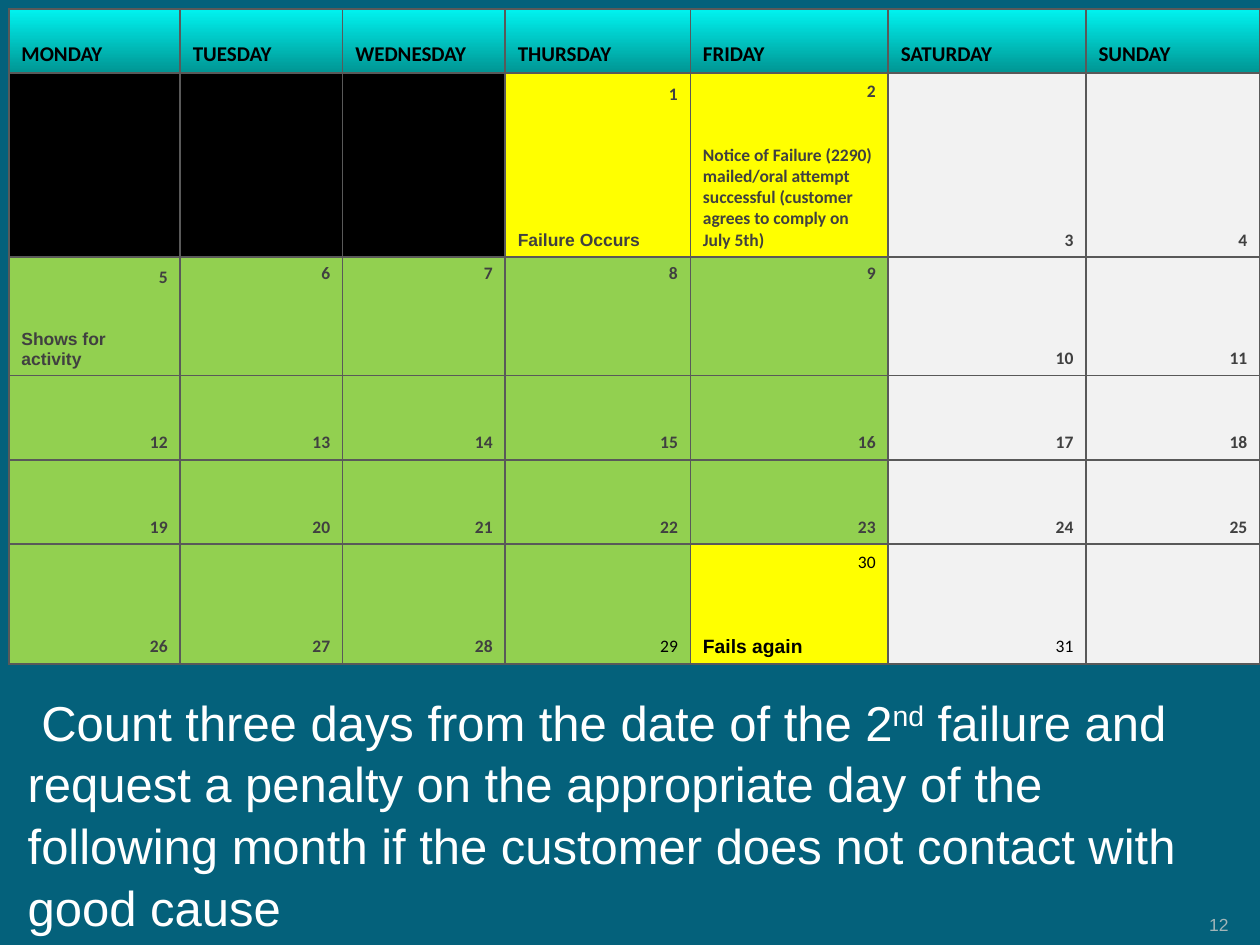
from dataclasses import dataclass

from lxml import etree
from pptx import Presentation
from pptx.dml.color import RGBColor
from pptx.enum.text import MSO_ANCHOR, PP_ALIGN
from pptx.oxml.ns import qn
from pptx.util import Inches, Pt

LEFT, RIGHT = PP_ALIGN.LEFT, PP_ALIGN.RIGHT
TOP, BOTTOM = MSO_ANCHOR.TOP, MSO_ANCHOR.BOTTOM

TEAL = RGBColor(0x04, 0x61, 0x7B)
CYAN = RGBColor(0x00, 0xF3, 0xF0)
DEEP = RGBColor(0x00, 0x95, 0x93)
BLACK = RGBColor(0x00, 0x00, 0x00)
WHITE = RGBColor(0xFF, 0xFF, 0xFF)
YELLOW = RGBColor(0xFF, 0xFF, 0x00)
GREEN = RGBColor(0x92, 0xD0, 0x50)
PALE = RGBColor(0xF2, 0xF2, 0xF2)
DARK = RGBColor(0x40, 0x40, 0x40)
GREY = RGBColor(0x59, 0x59, 0x59)
MIST = RGBColor(0xA2, 0xB5, 0xB8)

NAMES = ["MONDAY", "TUESDAY", "WEDNESDAY", "THURSDAY", "FRIDAY", "SATURDAY", "SUNDAY"]
WIDTHS = [1.36, 1.29, 1.29, 1.47, 1.57, 1.57, 1.38]
HEIGHTS = [0.51, 1.46, 0.94, 0.67, 0.67, 0.95]
BLANKS = 3  # cells before the first of the month
LAST = 31
WEEKEND = 5  # column of Saturday
HIGH = range(6, 10)  # days whose number stands at the top
PLAIN = range(29, LAST + 1)  # days in regular black type


@dataclass
class Note:
    lines: list[str]
    gap: float  # points between the day number and the note
    font: str = "Arial"
    size: float = 10
    color: RGBColor = DARK
    fill: RGBColor = YELLOW


NOTES = {
    1: Note(["Failure Occurs"], 72),
    2: Note(["Notice of Failure (2290) mailed/oral attempt successful "
             "(customer agrees to comply on July 5th)"], 24, font="Calibri"),
    5: Note(["Shows for", "activity"], 24, fill=GREEN),
    30: Note(["Fails again"], 36, size=11, color=BLACK),
}


def write(para, text: str, *, font: str = "Calibri", size: float = 10,
          color: RGBColor = DARK, bold: bool = False, align=LEFT, gap: float = 0):
    """Add a run to a paragraph and return the run."""
    para.alignment = align
    para.space_before = Pt(gap)
    run = para.add_run()
    run.text = text
    run.font.name = font
    run.font.size = Pt(size)
    run.font.bold = bold
    run.font.color.rgb = color
    return run


def paint(cell, color: RGBColor) -> None:
    cell.fill.solid()
    cell.fill.fore_color.rgb = color


def edge(cell) -> None:
    """Draw a thin grey line on all four sides of a cell."""
    props = cell._tc.get_or_add_tcPr()
    for i, side in enumerate(("a:lnL", "a:lnR", "a:lnT", "a:lnB")):
        line = etree.Element(qn(side), w=str(Pt(1)))
        solid = etree.SubElement(line, qn("a:solidFill"))
        etree.SubElement(solid, qn("a:srgbClr"), val=str(GREY))
        props.insert(i, line)


def head(cell, name: str) -> None:
    cell.fill.gradient()
    cell.fill.gradient_angle = 270
    for stop, color in zip(cell.fill.gradient_stops, (CYAN, DEEP)):
        stop.color.rgb = color
    cell.vertical_anchor = BOTTOM
    write(cell.text_frame.paragraphs[0], name, size=12, color=BLACK, bold=True)


def date(cell, day: int, col: int) -> None:
    """Fill the cell of one day; days outside the month stay empty."""
    note = NOTES.get(day)
    if day < 1:
        paint(cell, BLACK)
    elif note:
        paint(cell, note.fill)
    else:
        paint(cell, PALE if col >= WEEKEND else GREEN)
    if not 1 <= day <= LAST:
        return
    cell.vertical_anchor = TOP if day in HIGH else BOTTOM
    plain = day in PLAIN
    frame = cell.text_frame
    write(frame.paragraphs[0], str(day), color=BLACK if plain else DARK,
          bold=not plain, align=RIGHT)
    if note:
        for i, line in enumerate(note.lines):
            write(frame.add_paragraph(), line, font=note.font, size=note.size,
                  color=note.color, bold=True, gap=0 if i else note.gap)


def month(slide) -> None:
    table = slide.shapes.add_table(
        len(HEIGHTS), len(WIDTHS), Inches(0.07), Inches(0.07),
        Inches(sum(WIDTHS)), Inches(sum(HEIGHTS))).table
    for col, width in zip(table.columns, WIDTHS):
        col.width = Inches(width)
    for row, height in zip(table.rows, HEIGHTS):
        row.height = Inches(height)
    for r in range(len(HEIGHTS)):
        for c, name in enumerate(NAMES):
            cell = table.cell(r, c)
            if r == 0:
                head(cell, name)
            else:
                date(cell, (r - 1) * len(NAMES) + c + 1 - BLANKS, c)
            edge(cell)


def box(slide, x: float, y: float, w: float, h: float, pad: float, anchor):
    """Add a wrapped text box and return its first paragraph."""
    frame = slide.shapes.add_textbox(Inches(x), Inches(y), Inches(w), Inches(h)).text_frame
    frame.word_wrap = True
    frame.vertical_anchor = anchor
    frame.margin_left = frame.margin_right = Inches(pad)
    frame.margin_top = frame.margin_bottom = Inches(pad)
    return frame.paragraphs[0]


def main() -> None:
    deck = Presentation()
    deck.slide_width, deck.slide_height = Inches(10), Inches(7.5)
    slide = deck.slides.add_slide(deck.slide_layouts[6])
    slide.background.fill.solid()
    slide.background.fill.fore_color.rgb = TEAL
    month(slide)

    rule = box(slide, 0.17, 5.42, 9.67, 1.83, 0.05, TOP)
    rule.line_spacing = 1.05
    style = {"font": "Arial", "size": 28, "color": WHITE}
    write(rule, " Count three days from the date of the 2", **style)
    write(rule, "nd", **style).font._element.set("baseline", "30000")
    write(rule, " failure and request a penalty on the appropriate day of the following "
                "month if the customer does not contact with good cause", **style)

    page = box(slide, 8.92, 7.02, 0.83, 0.4, 0, BOTTOM)
    write(page, "12", font="Arial", color=MIST, align=RIGHT)
    deck.save("out.pptx")


if __name__ == "__main__":
    main()
